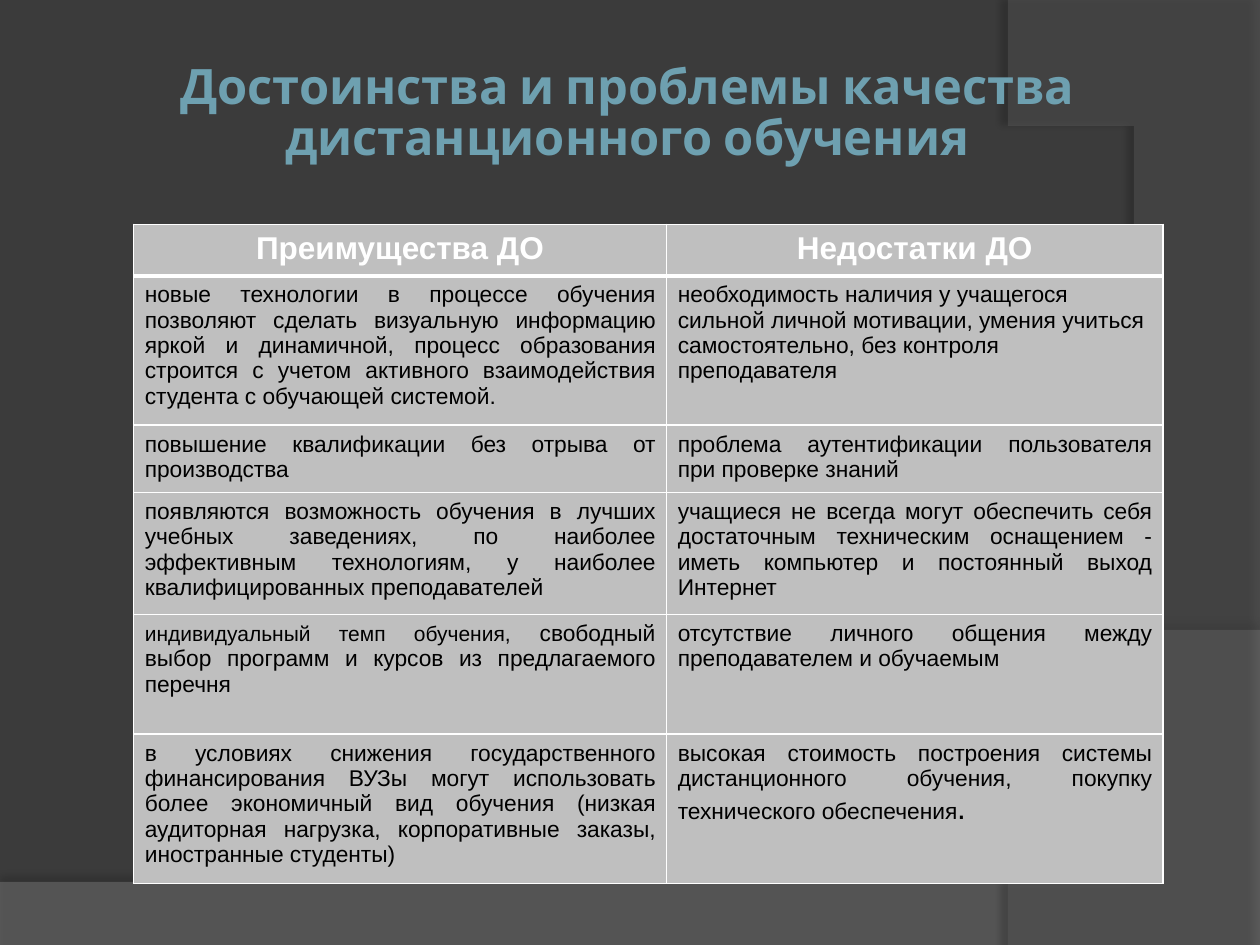
from lxml import etree
from pptx import Presentation, util as u
from pptx.dml.color import RGBColor
from pptx.enum import text
from pptx.oxml.ns import qn


def color(value):
    return RGBColor.from_string(value)


def bezier(p0, p1, p2, p3, steps=40):
    points = []
    for i in range(steps + 1):
        t = i / steps
        weights = ((1 - t) ** 3, 3 * t * (1 - t) ** 2, 3 * t * t * (1 - t), t ** 3)
        points.append(tuple(sum(w * p[axis] for w, p in zip(weights, (p0, p1, p2, p3)))
                            for axis in (0, 1)))
    return points


class SlideBuilder:
    font = "Arial"
    title_font = "Cabin"
    title_color = "6EA0B0"
    cell_fill = "BFBFBF"
    border = "FFFFFF"

    def __init__(self, prs, background):
        self.s = prs.slides.add_slide(prs.slide_layouts[6])
        fill = self.s.background.fill
        fill.solid()
        fill.fore_color.rgb = color(background)

    def solid(self, parent, value, alpha=None):
        fill = etree.SubElement(parent, qn("a:solidFill"))
        clr = etree.SubElement(fill, qn("a:srgbClr"), val=value)
        if alpha is not None:
            etree.SubElement(clr, qn("a:alpha"), val=str(alpha * 1000))

    def wave(self, points, fill, alpha, shadow_alpha, distance, angle):
        builder = self.s.shapes.build_freeform(*points[0], scale=float(u.Inches(1)))
        builder.add_line_segments(points[1:], close=True)
        sp = builder.convert_to_shape()
        sp.fill.solid()
        sp.fill.fore_color.rgb = color(fill)
        clr = sp._element.spPr.find(".//" + qn("a:srgbClr"))
        etree.SubElement(clr, qn("a:alpha"), val=str(alpha * 1000))
        sp.line.fill.background()
        sp.shadow.inherit = False
        effects = sp._element.spPr.find(qn("a:effectLst"))
        shadow = etree.SubElement(effects, qn("a:outerShdw"), blurRad=str(u.Pt(4)),
                                  dist=str(u.Pt(distance)), dir=str(angle * 60000),
                                  algn="ctr", rotWithShape="0")
        clr = etree.SubElement(shadow, qn("a:srgbClr"), val="000000")
        etree.SubElement(clr, qn("a:alpha"), val=str(shadow_alpha * 1000))

    def run(self, p, content, size, value, bold=False, font=None):
        r = p.add_run()
        r.text = content
        r.font.name = font or self.font
        r.font.size = u.Pt(size)
        r.font.bold = bold
        r.font.color.rgb = color(value)

    def title(self, content, left, top, width, height):
        sp = self.s.shapes.add_textbox(*map(u.Inches, (left, top, width, height)))
        tf = sp.text_frame
        tf.word_wrap = True
        tf.vertical_anchor = text.MSO_ANCHOR.MIDDLE
        tf.margin_left = tf.margin_right = tf.margin_top = u.Inches(0.05)
        tf.margin_bottom = u.Inches(0.15)
        p = tf.paragraphs[0]
        p.alignment = text.PP_ALIGN.CENTER
        p.line_spacing = 0.87
        self.run(p, content, 27.9, self.title_color, True, self.title_font)

    def cell(self, cell, runs, align, value, bold, widths):
        cell.margin_left = cell.margin_right = u.Inches(0.09)
        cell.margin_top = cell.margin_bottom = u.Inches(0.05)
        p = cell.text_frame.paragraphs[0]
        p.alignment = align
        for content, size in runs:
            self.run(p, content, size, value, bold)
        props = cell._tc.get_or_add_tcPr()
        for side, width in zip("LRTB", widths):
            line = etree.SubElement(props, qn("a:ln" + side), w=str(u.Pt(width)))
            self.solid(line, self.border)
        cell.fill.solid()
        cell.fill.fore_color.rgb = color(self.cell_fill)

    def table(self, left, top, columns, heights, headers, rows):
        frame = self.s.shapes.add_table(
            len(heights), len(columns),
            *map(u.Inches, (left, top, sum(columns), sum(heights))))
        table = frame.table
        for column, width in zip(table.columns, columns):
            column.width = u.Inches(width)
        for row, height in zip(table.rows, heights):
            row.height = u.Inches(height)
        for c, header in enumerate(headers):
            self.cell(table.cell(0, c), [(header, 18)], text.PP_ALIGN.CENTER,
                      "FFFFFF", True, (1, 1, 1, 3))
        for r, row in enumerate(rows, 1):
            for c, content in enumerate(row):
                runs = [(content, 13)] if isinstance(content, str) else content
                align = text.PP_ALIGN.LEFT if (r, c) == (1, 1) else text.PP_ALIGN.JUSTIFY
                self.cell(table.cell(r, c), runs, align, "000000", False,
                          (1, 1, 3 if r == 1 else 1, 1))


ROWS = [
    ("новые технологии в процессе обучения позволяют сделать визуальную информацию "
     "яркой и динамичной, процесс образования строится с учетом активного "
     "взаимодействия студента с обучающей системой.",
     "необходимость наличия у учащегося сильной личной мотивации, умения учиться "
     "самостоятельно, без контроля преподавателя"),
    ("повышение квалификации без отрыва от производства",
     "проблема аутентификации пользователя при проверке знаний"),
    ("появляются возможность обучения в лучших учебных заведениях, по наиболее "
     "эффективным технологиям, у наиболее квалифицированных преподавателей",
     "учащиеся не всегда могут обеспечить себя достаточным техническим оснащением - "
     "иметь компьютер и постоянный выход Интернет"),
    ([("индивидуальный темп обучения, ", 12),
      ("свободный выбор программ и курсов из предлагаемого перечня", 13)],
     "отсутствие личного общения между преподавателем и обучаемым"),
    ("в условиях снижения государственного финансирования ВУЗы могут использовать "
     "более экономичный вид обучения (низкая аудиторная нагрузка, корпоративные "
     "заказы, иностранные студенты)",
     [("высокая стоимость построения системы дистанционного обучения, покупку "
       "технического обеспечения", 13), (".", 18)]),
]


def main():
    prs = Presentation()
    prs.slide_width, prs.slide_height = u.Inches(10), u.Inches(7.5)
    slide = SlideBuilder(prs, "3B3B3B")
    bottom_curve = bezier((10, 5.2), (5.59, 7.29), (3.91, 7.19), (0, 7.05))
    slide.wave([(0, 7.5), (10, 7.5)] + bottom_curve, "7F7F7F", 45, 35, 3.5, 270)
    right_curve = bezier((8.21, 7.5), (9.35, 6.19), (10.18, 3), (8, 0))
    slide.wave([(10, 0.02), (10, 7.5)] + right_curve, "5E5E5E", 40, 45, 4, 180)
    slide.title("Достоинства и проблемы качества дистанционного обучения",
                0.47, 0.45, 9.02, 1.02)
    slide.table(1.06, 1.78, (4.23, 3.94), (0.41, 1.11, 0.5, 0.91, 0.95, 1.11),
                ("Преимущества ДО", "Недостатки ДО"), ROWS)
    prs.save("out.pptx")


if __name__ == "__main__":
    main()
